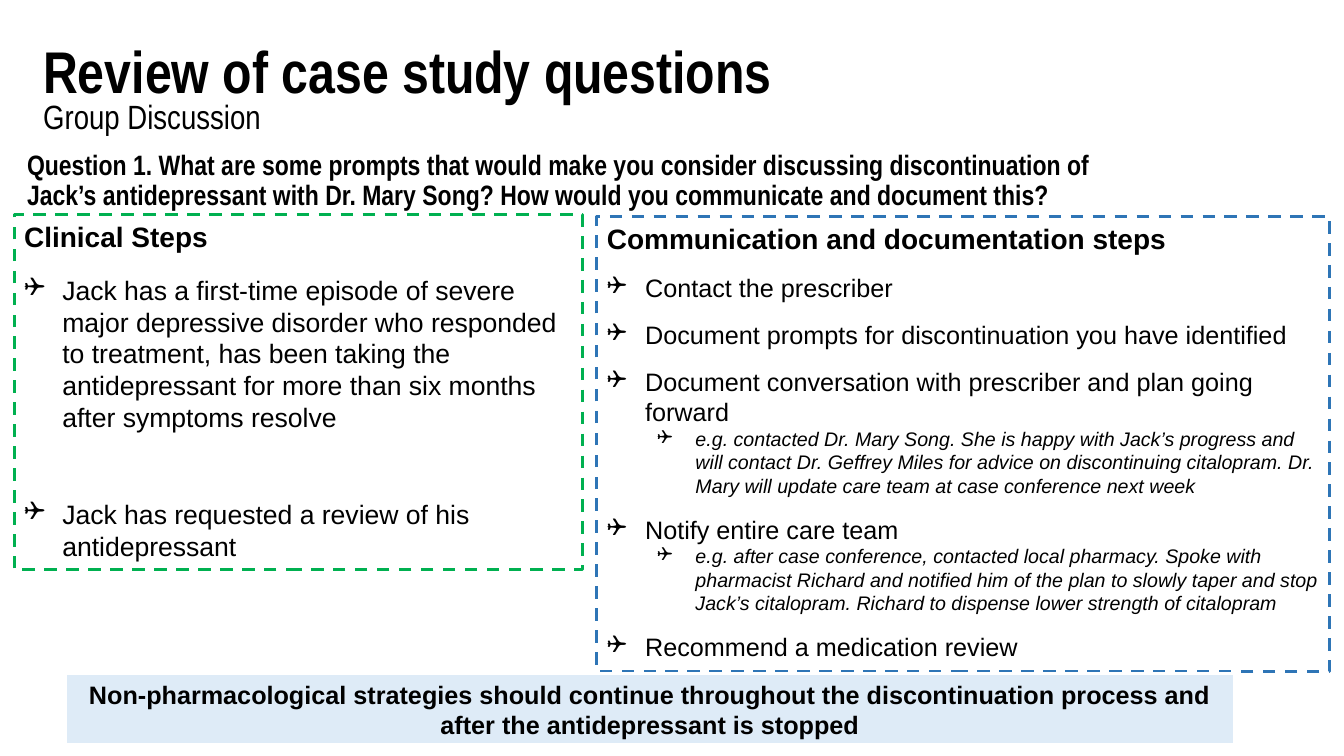
"""Build the case study review slide with clinical and communication steps."""
from dataclasses import dataclass

from lxml.etree import SubElement
from pptx import Presentation
from pptx.dml.color import RGBColor
from pptx.enum.dml import MSO_LINE
from pptx.enum.shapes import MSO_SHAPE
from pptx.enum.text import MSO_ANCHOR, PP_ALIGN
from pptx.oxml.ns import qn
from pptx.util import Inches, Pt

TITLE = "Review of case study questions"
SUBTITLE = "Group Discussion"
QUESTION = ("Question 1. What are some prompts that would make you consider discussing "
            "discontinuation of Jack’s antidepressant with Dr. Mary Song? How would you "
            "communicate and document this?")
CLINICAL = {
    "heading": "Clinical Steps",
    "steps": [
        ("Jack has a first-time episode of severe major depressive disorder who responded "
         "to treatment, has been taking the antidepressant for more than six months after "
         "symptoms resolve", None),
        ("Jack has requested a review of his antidepressant", None),
    ],
}
COMMUNICATION = {
    "heading": "Communication and documentation steps",
    "steps": [
        ("Contact the prescriber", None),
        ("Document prompts for discontinuation you have identified", None),
        ("Document conversation with prescriber and plan going forward",
         "e.g. contacted Dr. Mary Song. She is happy with Jack’s progress and will contact "
         "Dr. Geffrey Miles for advice on discontinuing citalopram. Dr. Mary will update "
         "care team at case conference next week"),
        ("Notify entire care team",
         "e.g. after case conference, contacted local pharmacy. Spoke with pharmacist "
         "Richard and notified him of the plan to slowly taper and stop Jack’s citalopram. "
         "Richard to dispense lower strength of citalopram"),
        ("Recommend a medication review", None),
    ],
}
REMINDER = ("Non-pharmacological strategies should continue throughout the discontinuation "
            "process and after the antidepressant is stopped")


@dataclass(frozen=True)
class Theme:
    """Colours, fonts and type sizes."""
    text: str = "000000"
    clinical: str = "00B050"
    communication: str = "2E75B6"
    reminder: str = "DEEBF7"
    white: str = "FFFFFF"
    narrow: str = "Arial Narrow"
    body: str = "Arial"
    title_size: int = 42
    subtitle_size: int = 24
    heading_size: int = 20
    clinical_size: int = 19
    step_size: int = 18
    example_size: int = 14
    outline: float = 2.25
    bullet: str = "❑"
    hanging: float = 0.38
    example_indent: float = 0.88


THEME = Theme()


def write(frame, text, *, size, font=THEME.body, bold=False, italic=False, before=0,
          spacing=None, indent=None, level=0, align=PP_ALIGN.LEFT):
    """Add one formatted paragraph to a text frame."""
    paragraph = frame.paragraphs[0]
    if paragraph.runs:
        paragraph = frame.add_paragraph()
    paragraph.alignment = align
    paragraph.level = level
    paragraph.space_before = Pt(before)
    if spacing:
        paragraph.line_spacing = spacing
    if indent:
        properties = paragraph._p.get_or_add_pPr()
        properties.set("marL", str(Inches(indent)))
        properties.set("indent", str(-Inches(THEME.hanging)))
        SubElement(properties, qn("a:buFont")).set("typeface", "Wingdings")
        SubElement(properties, qn("a:buChar")).set("char", THEME.bullet)
    run = paragraph.add_run()
    run.text = text
    run.font.name = font
    run.font.size = Pt(size)
    run.font.bold = bold
    run.font.italic = italic
    run.font.color.rgb = RGBColor.from_string(THEME.text)


def add_label(slide, box, text, **style):
    """Add a narrow-type text box."""
    frame = slide.shapes.add_textbox(*map(Inches, box)).text_frame
    frame.word_wrap = True
    write(frame, text, font=THEME.narrow, spacing=0.9, **style)


def add_panel(slide, box, *, line, fill=None, dash=None, anchor=MSO_ANCHOR.TOP):
    """Add an outlined rectangle and return its text frame."""
    panel = slide.shapes.add_shape(MSO_SHAPE.RECTANGLE, *map(Inches, box))
    panel.shadow.inherit = False
    if fill:
        panel.fill.solid()
        panel.fill.fore_color.rgb = RGBColor.from_string(fill)
    else:
        panel.fill.background()
    panel.line.color.rgb = RGBColor.from_string(line)
    panel.line.width = Pt(THEME.outline)
    panel.line.dash_style = dash
    panel.text_frame.word_wrap = True
    panel.text_frame.vertical_anchor = anchor
    return panel.text_frame


def add_steps(slide, box, content, *, line, size, first_gap, gap):
    """Add a dashed panel with a heading and a checklist."""
    frame = add_panel(slide, box, line=line, dash=MSO_LINE.DASH)
    write(frame, content["heading"], size=THEME.heading_size, bold=True)
    for number, (step, example) in enumerate(content["steps"]):
        write(frame, step, size=size, indent=THEME.hanging,
              before=gap if number else first_gap)
        if example:
            write(frame, example, size=THEME.example_size, italic=True, level=1,
                  indent=THEME.example_indent)


def main():
    """Lay out the slide and save it."""
    deck = Presentation()
    deck.slide_width, deck.slide_height = Inches(13.33), Inches(7.5)
    slide = deck.slides.add_slide(deck.slide_layouts[6])
    add_label(slide, (0.33, 0.95, 8.15, 0.51), SUBTITLE, size=THEME.subtitle_size)
    add_label(slide, (0.33, 0.37, 8.15, 0.81), TITLE, size=THEME.title_size, bold=True)
    add_label(slide, (0.17, 1.45, 11.47, 0.71), QUESTION, size=THEME.heading_size, bold=True)
    add_steps(slide, (0.14, 2.13, 5.64, 3.52), CLINICAL, line=THEME.clinical,
              size=THEME.clinical_size, first_gap=14.5, gap=46)
    add_steps(slide, (5.92, 2.15, 7.27, 4.51), COMMUNICATION, line=THEME.communication,
              size=THEME.step_size, first_gap=12, gap=12)
    reminder = add_panel(slide, (0.65, 6.68, 11.59, 0.71), line=THEME.white,
                         fill=THEME.reminder, anchor=MSO_ANCHOR.MIDDLE)
    write(reminder, REMINDER, size=THEME.step_size, bold=True, align=PP_ALIGN.CENTER)
    deck.save("out.pptx")


if __name__ == "__main__":
    main()
